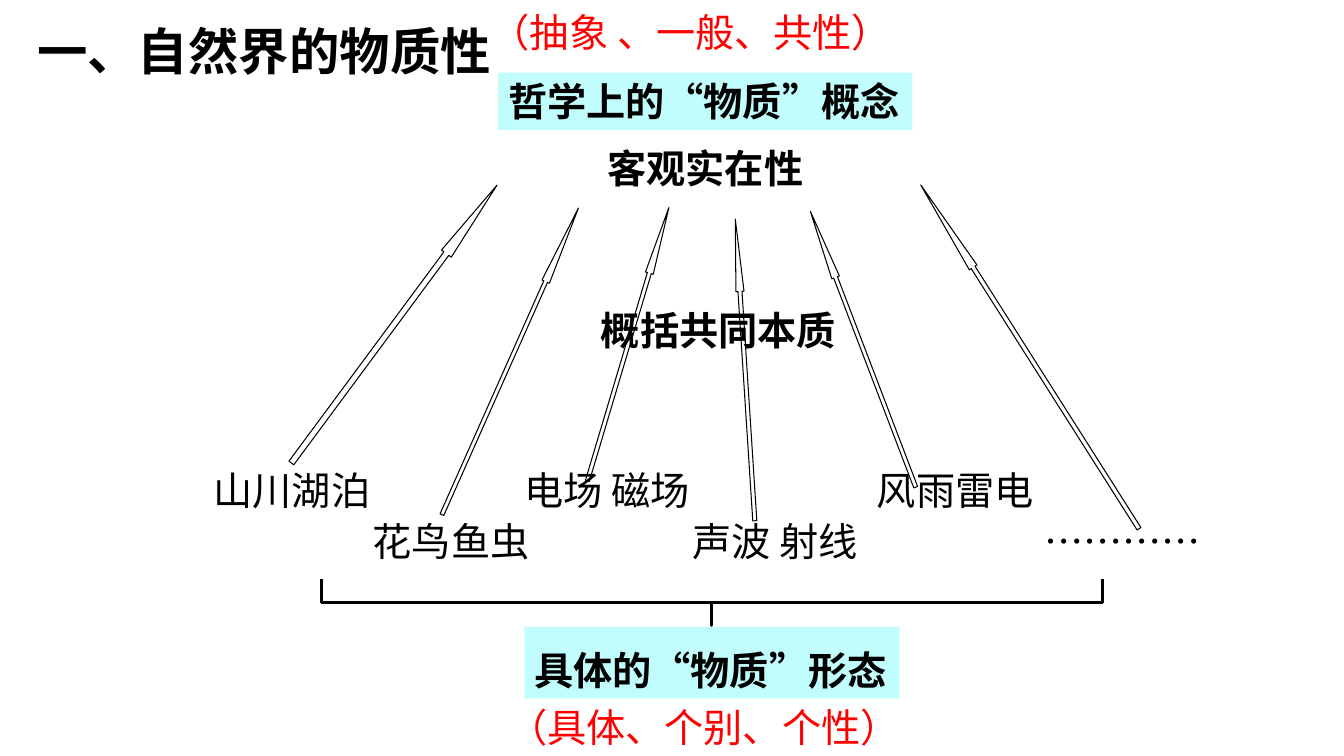
"""Builds the slide on the materiality of nature: concrete forms abstracted into the concept of matter."""
from pptx import Presentation
from pptx.dml.color import RGBColor
from pptx.enum.shapes import MSO_SHAPE as Preset
from pptx.enum.text import MSO_ANCHOR as Anchor, PP_ALIGN as Align
from pptx.oxml.ns import qn
from pptx.util import Inches, Pt

COLORS = {"ink": "000000", "accent": "FF0000", "panel": "C2FDFE"}
CJK = "Noto Sans CJK SC"
SERIF = "Times New Roman"


def add_outline(kind, place, adjustments, angle, weight):
    shape = page.shapes.add_shape(kind, *map(Inches, place))
    shape.shadow.inherit = False
    shape.fill.background()
    shape.line.color.rgb = RGBColor.from_string(COLORS["ink"])
    shape.line.width = Pt(weight)
    shape.rotation = angle
    for index, value in enumerate(adjustments):
        shape.adjustments[index] = value


def add_label(text, place, color="ink", font=CJK, size=28, bold=False, panel=False, wrap=False):
    if panel:
        box = page.shapes.add_shape(Preset.RECTANGLE, *map(Inches, place))
        box.shadow.inherit = False
        box.fill.solid()
        box.fill.fore_color.rgb = RGBColor.from_string(COLORS["panel"])
        box.line.fill.background()
    else:
        box = page.shapes.add_textbox(*map(Inches, place))
    frame = box.text_frame
    frame.word_wrap = wrap
    frame.vertical_anchor = Anchor.TOP
    para = frame.paragraphs[0]
    para.alignment = Align.LEFT
    span = para.add_run()
    span.text = text
    for name, value in {"name": font, "size": Pt(size), "bold": bold}.items():
        setattr(span.font, name, value)
    span.font.color.rgb = RGBColor.from_string(COLORS[color])
    east_asian = span.font._element.makeelement(qn("a:ea"), {"typeface": CJK})
    span.font._element.find(qn("a:latin")).addnext(east_asian)
    return frame


deck = Presentation()
deck.slide_width, deck.slide_height = Inches(13.33), Inches(7.5)
page = deck.slides.add_slide(deck.slide_layouts[6])

arrows = [
    ((3.85, 1.5, 0.12, 3.43), 36.5, 7.04),
    ((5.02, 1.92, 0.08, 3.33), 24, 10),
    ((6.19, 2, 0.08, 2.83), 16.6, 8.5),
    ((8.52, 2, 0.08, 2.93), 339.1, 8.78),
    ((7.35, 2.17, 0.08, 3), 356.3, 9),
    ((10.17, 1.52, 0.09, 4.04), 327.6, 10.75),
]
for place, angle, head in arrows:
    add_outline(Preset.UP_ARROW, place, (0.5, head), angle, 0.75)

reality = add_label("客观实在性", (5.1, 1.29, 3.79, 0.75), font=SERIF, bold=True)
reality.vertical_anchor = Anchor.MIDDLE
reality.paragraphs[0].alignment = Align.CENTER

essence = add_label("概括共同本质", (5.74, 2.83, 2.87, 0.77), font=SERIF, bold=True, wrap=True)
essence.margin_left, essence.margin_top = Inches(0.22), Inches(0.21)

forms = [
    ("山川湖泊", 2.02, 1.76),
    ("花鸟鱼虫", 3.6, 1.76),
    ("电场 磁场", 5.1, 1.95),
    ("声波 射线", 6.77, 1.95),
    ("风雨雷电", 8.6, 1.76),
    ("…………", 10.26, 1.76),
]
for index, (text, left, width) in enumerate(forms):
    add_label(text, (left, 4.58 + index % 2 * 0.5, width, 0.57))

add_outline(Preset.RIGHT_BRACE, (6.83, 2.1, 0.46, 7.75), (0, 0.5), 90, 2)

add_label("哲学上的“物质”概念", (4.94, 0.72, 4.11, 0.57), bold=True, panel=True)
concrete = add_label("具体的“物质”形态", (5.2, 6.22, 3.72, 0.71), bold=True, panel=True)
concrete.paragraphs[0].line_spacing = 1.3
add_label("（抽象 、一般、共性）", (4.77, 0.03, 4.47, 0.57), color="accent", wrap=True)
add_label("（具体、个别、个性）", (4.94, 6.93, 4.09, 0.57), color="accent")
add_label("一、自然界的物质性", (0.27, 0.15, 9.33, 0.7), font="Arial", size=36, bold=True, wrap=True)

deck.save("out.pptx")
